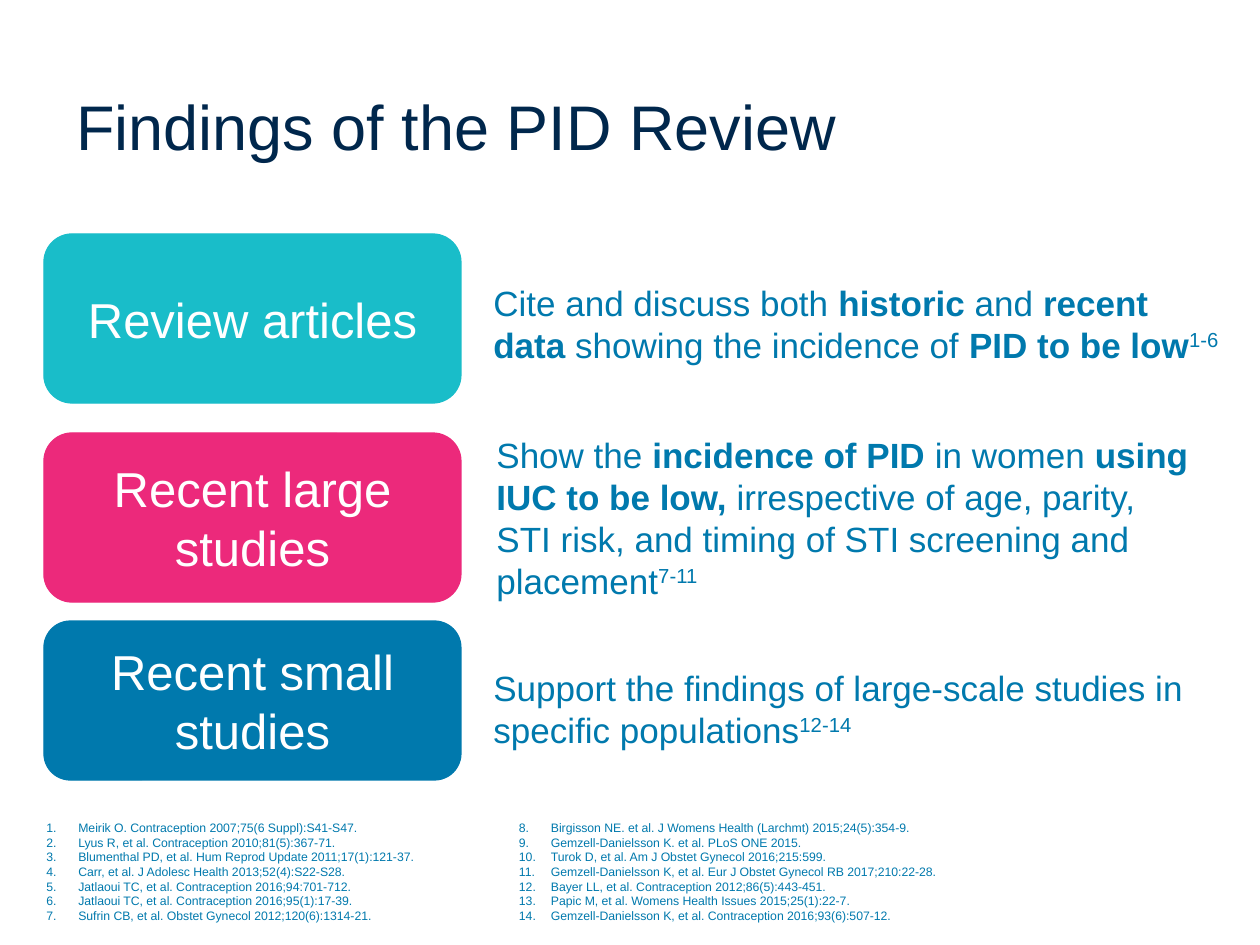
from pptx import Presentation
from pptx.dml.color import RGBColor
from pptx.enum.shapes import MSO_SHAPE as SHAPE
from pptx.enum.text import MSO_ANCHOR as ANCHOR, PP_ALIGN as ALIGN
from pptx.oxml.xmlchemy import OxmlElement
from pptx.util import Pt

PX = 914400 / 126
BLUE = "0079AD"
BOLD, SUPER = {"bold": True}, {"super": True}


def px(*values):
    """Turn pixel lengths into EMU."""
    return [round(v * PX) for v in values]


def add_runs(p, runs, size, color):
    """Add (text, format) runs to a paragraph."""
    for text, fmt in runs:
        r = p.add_run()
        r.text = text
        r.font.color.rgb = RGBColor.from_string(color)
        look = {"name": "Arial", "size": Pt(size), "bold": fmt.get("bold", False)}
        for key, value in look.items():
            setattr(r.font, key, value)
        if fmt.get("super"):
            r._r.get_or_add_rPr().set("baseline", "30000")


prs = Presentation()
prs.slide_width, prs.slide_height = px(1260, 945)
s = prs.slides.add_slide(prs.slide_layouts[6])

# Title
tf = s.shapes.add_textbox(*px(64, 58, 1190, 135)).text_frame
tf.word_wrap = True
tf.vertical_anchor = ANCHOR.MIDDLE
add_runs(tf.paragraphs[0], [("Findings of the PID Review", {})], 36, "00274C")

# Source types
categories = [
    ("Review articles", "19BDC9", 234, 169),
    ("Recent large studies", "EC297B", 433, 169),
    ("Recent small studies", BLUE, 621, 159),
]
for label, color, top, height in categories:
    sp = s.shapes.add_shape(SHAPE.ROUNDED_RECTANGLE, *px(44, top, 417, height))
    sp.shadow.inherit = False
    sp.fill.solid()
    sp.fill.fore_color.rgb = sp.line.color.rgb = RGBColor.from_string(color)
    sp.line.width = Pt(0.75)
    tf = sp.text_frame
    tf.word_wrap = True
    tf.vertical_anchor = ANCHOR.MIDDLE
    tf.paragraphs[0].alignment = ALIGN.CENTER
    add_runs(tf.paragraphs[0], [(label, {})], 28, "FFFFFF")

# Findings
findings = [
    ((481, 275, 753, 97), [
        ("Cite and discuss both ", {}), ("historic", BOLD), (" and ", {}),
        ("recent data", BOLD), (" showing the incidence of ", {}),
        ("PID to be low", BOLD), ("1-6", SUPER)]),
    ((484, 427, 723, 181), [
        ("Show the ", {}), ("incidence of PID ", BOLD), ("in women ", {}),
        ("using IUC to be low,", BOLD),
        (" irrespective of age, parity, STI risk, and timing of STI "
         "screening and placement", {}), ("7-11", SUPER)]),
    ((481, 660, 776, 97), [
        ("Support the findings of large-scale studies in specific populations", {}),
        ("12-14", SUPER)]),
]
for box, runs in findings:
    tf = s.shapes.add_textbox(*px(*box)).text_frame
    tf.word_wrap = True
    add_runs(tf.paragraphs[0], runs, 20, BLUE)

# Numbered references in two columns
references = [
    "Meirik O. Contraception 2007;75(6 Suppl):S41-S47.",
    "Lyus R, et al. Contraception 2010;81(5):367-71.",
    "Blumenthal PD, et al. Hum Reprod Update 2011;17(1):121-37.",
    "Carr, et al. J Adolesc Health 2013;52(4):S22-S28.",
    "Jatlaoui TC, et al. Contraception 2016;94:701-712.",
    "Jatlaoui TC, et al. Contraception 2016;95(1):17-39.",
    "Sufrin CB, et al. Obstet Gynecol 2012;120(6):1314-21.",
    "Birgisson NE. et al. J Womens Health (Larchmt) 2015;24(5):354-9.",
    "Gemzell-Danielsson K. et al. PLoS ONE 2015.",
    "Turok D, et al. Am J Obstet Gynecol 2016;215:599.",
    "Gemzell-Danielsson K, et al. Eur J Obstet Gynecol RB 2017;210:22-28.",
    "Bayer LL, et al. Contraception 2012;86(5):443-451.",
    "Papic M, et al. Womens Health Issues 2015;25(1):22-7.",
    "Gemzell-Danielsson K, et al. Contraception 2016;93(6):507-12.",
]
tf = s.shapes.add_textbox(*px(34, 814, 970, 117)).text_frame
tf.word_wrap = True
tf._txBody.bodyPr.set("numCol", "2")
indent = px(32)[0]
for i, reference in enumerate(references):
    p = tf.add_paragraph() if i else tf.paragraphs[0]
    pPr = p._p.get_or_add_pPr()
    pPr.set("marL", str(indent))
    pPr.set("indent", str(-indent))
    number = OxmlElement("a:buAutoNum")
    number.set("type", "arabicPeriod")
    pPr.append(number)
    add_runs(p, [(reference, {})], 7, BLUE)

prs.save("out.pptx")
